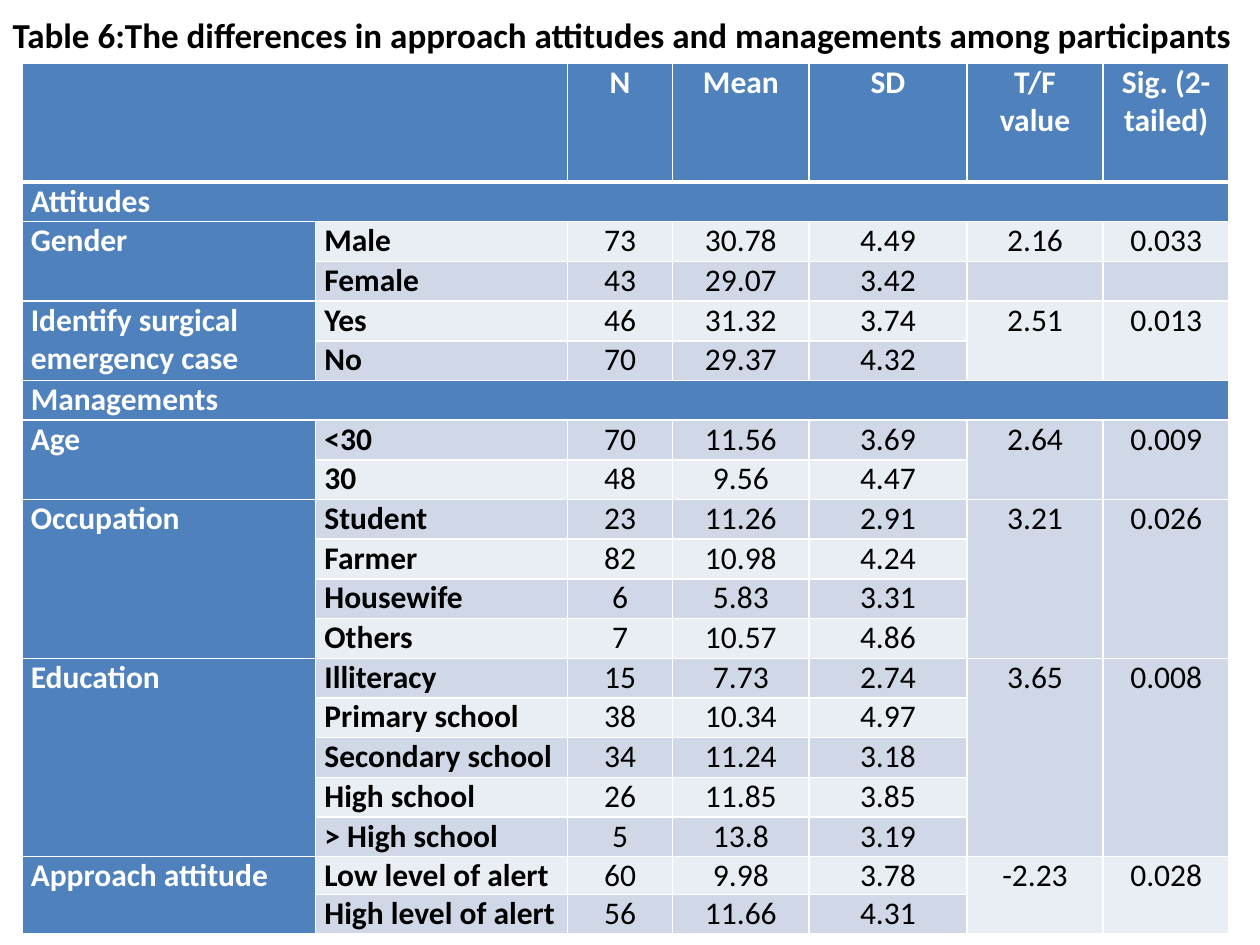
from lxml.etree import SubElement
from pptx import Presentation
from pptx.dml.color import RGBColor
from pptx.enum.text import MSO_ANCHOR, MSO_AUTO_SIZE, PP_ALIGN as Align
from pptx.oxml.ns import qn
from pptx.util import Cm, Pt

COLORS = {"blue": "4F81BD", "light": "E9EDF4", "dark": "D0D8E8",
          "white": "FFFFFF", "black": "000000"}
FONT = "Calibri"
TITLE = "Table 6:The differences in approach attitudes and managements among participants"
HEADERS = ["N", "Mean", "SD", "T/F value", "Sig. (2- tailed)"]
COLUMN_WIDTHS = [5.92, 5.08, 2.12, 2.75, 3.18, 2.75, 2.54]
ROW_HEIGHTS = [2.4] + [0.8] * 17 + [0.75, 0.8]

# Section -> groups of (factor, T/F value, significance, rows of level, N, mean, SD)
SECTIONS = {
    "Attitudes": [
        ("Gender", "2.16", "0.033", [
            ("Male", "73", "30.78", "4.49"),
            ("Female", "43", "29.07", "3.42")]),
        ("Identify surgical emergency case", "2.51", "0.013", [
            ("Yes", "46", "31.32", "3.74"),
            ("No", "70", "29.37", "4.32")]),
    ],
    "Managements": [
        ("Age", "2.64", "0.009", [
            ("<30", "70", "11.56", "3.69"),
            ("30", "48", "9.56", "4.47")]),
        ("Occupation", "3.21", "0.026", [
            ("Student", "23", "11.26", "2.91"),
            ("Farmer", "82", "10.98", "4.24"),
            ("Housewife", "6", "5.83", "3.31"),
            ("Others", "7", "10.57", "4.86")]),
        ("Education", "3.65", "0.008", [
            ("Illiteracy", "15", "7.73", "2.74"),
            ("Primary school", "38", "10.34", "4.97"),
            ("Secondary school", "34", "11.24", "3.18"),
            ("High school", "26", "11.85", "3.85"),
            ("> High school", "5", "13.8", "3.19")]),
        ("Approach attitude", "-2.23", "0.028", [
            ("Low level of alert", "60", "9.98", "3.78"),
            ("High level of alert", "56", "11.66", "4.31")]),
    ],
}
UNMERGED_RESULTS = {"Gender"}


def rgb(name):
    return RGBColor.from_string(COLORS[name])


def format_text(frame, size, color, bold, align):
    for para in frame.paragraphs:
        para.alignment = align
        for span in para.runs:
            font = span.font
            font.name, font.size, font.bold = FONT, Pt(size), bold
            font.color.rgb = rgb(color)


def add_title(page):
    box = page.shapes.title
    box.left, box.top, box.width, box.height = Cm(0), Cm(0.15), Cm(25.4), Cm(1.11)
    frame = box.text_frame
    frame.text = TITLE
    frame.word_wrap = True
    frame.auto_size = MSO_AUTO_SIZE.SHAPE_TO_FIT_TEXT
    frame.vertical_anchor = MSO_ANCHOR.TOP
    format_text(frame, 20, "black", True, Align.LEFT)


def set_borders(cell, top, bottom):
    props = cell._tc.get_or_add_tcPr()
    for side, width in (("L", 1), ("R", 1), ("T", top), ("B", bottom)):
        line = SubElement(props, qn(f"a:ln{side}"), w=str(Pt(width)))
        fill = SubElement(line, qn("a:solidFill"))
        SubElement(fill, qn("a:srgbClr"), val=COLORS["white"])


def style_grid(table):
    """Give every cell its margins, borders and banded fill."""
    for row, table_row in enumerate(table.rows):
        for column, cell in enumerate(table_row.cells):
            cell.margin_left = cell.margin_right = Cm(0.18)
            cell.margin_top = cell.margin_bottom = 0
            set_borders(cell, top=3 if row == 1 else 1, bottom=3 if row == 0 else 1)
            band = "dark" if row % 2 else "light"
            cell.fill.solid()
            cell.fill.fore_color.rgb = rgb("blue" if row == 0 or column == 0 else band)


def write_cell(cell, text, color="black", bold=False, align=Align.CENTER):
    cell.text_frame.text = text
    format_text(cell.text_frame, 18, color, bold, align)


def write_section(table, row, name):
    banner = table.cell(row, 0)
    banner.merge(table.cell(row, len(COLUMN_WIDTHS) - 1))
    write_cell(banner, name, "white", True, Align.JUSTIFY)


def write_group(table, row, group):
    factor, value, significance, levels = group
    last = row + len(levels) - 1
    merged = [0] if factor in UNMERGED_RESULTS else [0, 5, 6]
    for column in merged:
        table.cell(row, column).merge(table.cell(last, column))
    write_cell(table.cell(row, 0), factor, "white", True, Align.LEFT)
    write_cell(table.cell(row, 5), value)
    write_cell(table.cell(row, 6), significance)
    for offset, (level, *numbers) in enumerate(levels):
        write_cell(table.cell(row + offset, 1), level, bold=True, align=Align.JUSTIFY)
        for column, number in enumerate(numbers, start=2):
            write_cell(table.cell(row + offset, column), number)
    return last + 1


def add_results_table(page):
    table = page.shapes.add_table(
        len(ROW_HEIGHTS), len(COLUMN_WIDTHS), Cm(0.44), Cm(1.27),
        Cm(sum(COLUMN_WIDTHS)), Cm(sum(ROW_HEIGHTS))).table
    table.first_row = table.horz_banding = False
    for column, width in zip(table.columns, COLUMN_WIDTHS):
        column.width = Cm(width)
    for row, height in zip(table.rows, ROW_HEIGHTS):
        row.height = Cm(height)
    style_grid(table)

    # Header
    table.cell(0, 0).merge(table.cell(0, 1))
    for column, header in enumerate(HEADERS, start=2):
        write_cell(table.cell(0, column), header, "white", True)

    # Body
    row = 1
    for name, groups in SECTIONS.items():
        write_section(table, row, name)
        row += 1
        for group in groups:
            row = write_group(table, row, group)


def main():
    deck = Presentation()
    deck.slide_width, deck.slide_height = Cm(25.4), Cm(19.05)
    page = deck.slides.add_slide(deck.slide_layouts[5])
    add_title(page)
    add_results_table(page)
    deck.save("out.pptx")


if __name__ == "__main__":
    main()
